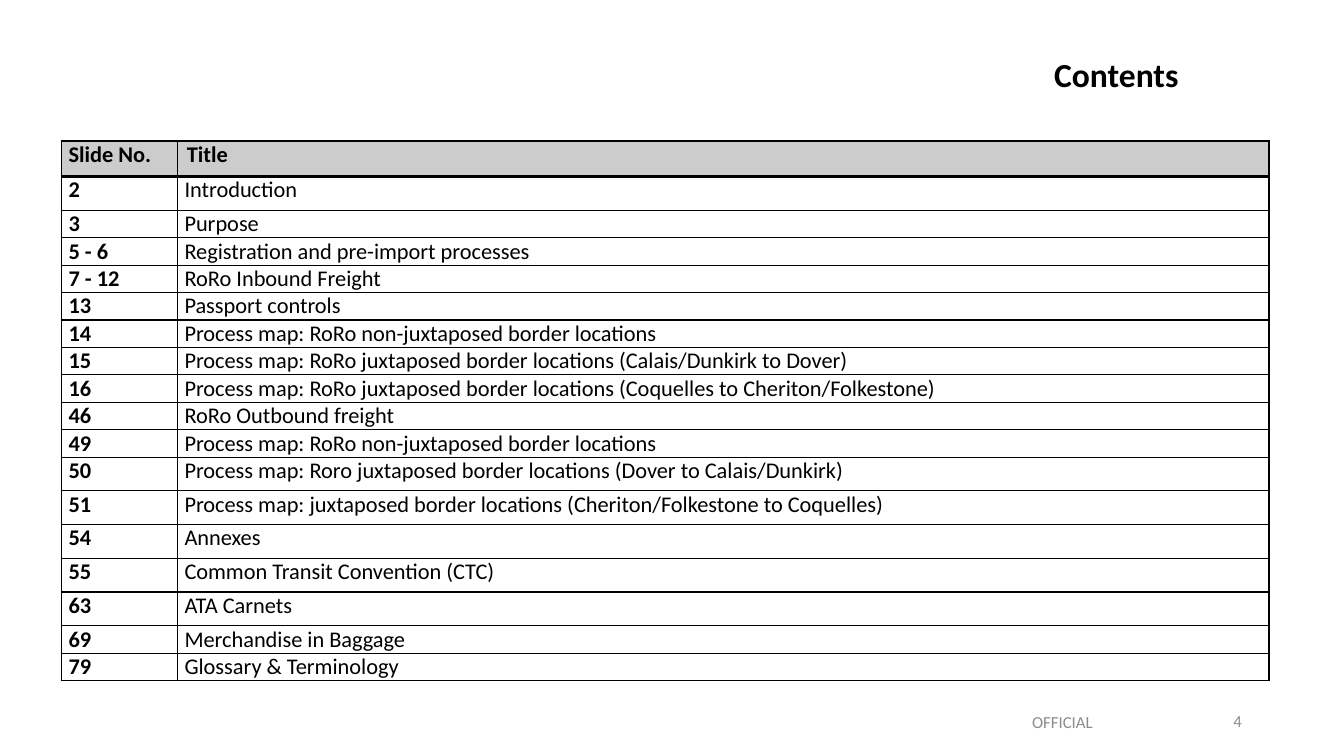
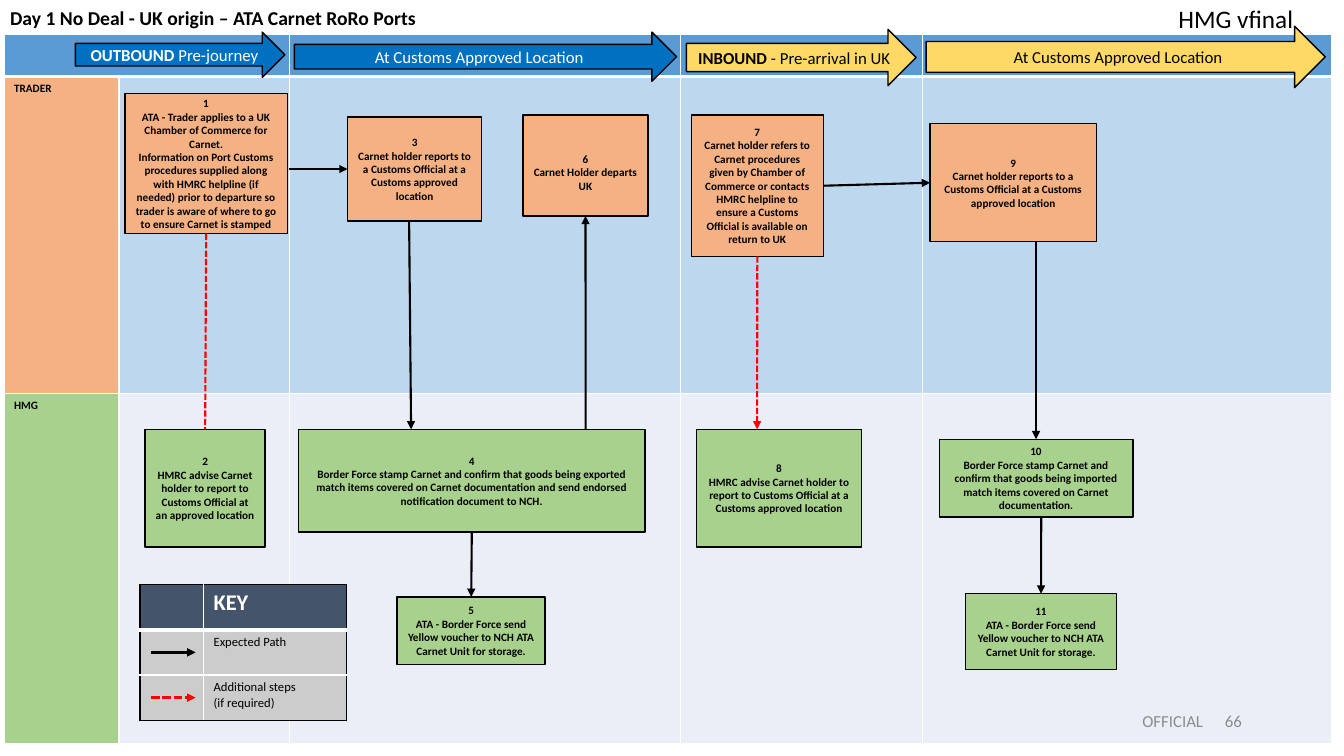
import dataclasses
import itertools
import typing

import lxml.etree
import pptx
import pptx.chart.data
import pptx.dml.color
import pptx.enum.dml
import pptx.enum.shapes
import pptx.enum.text
import pptx.oxml.ns
import pptx.util

Cm = pptx.util.Cm
Align = pptx.enum.text.PP_ALIGN
Anchor = pptx.enum.text.MSO_ANCHOR
Preset = pptx.enum.shapes.MSO_SHAPE
TOP, LEFT, BOTTOM, RIGHT = range(4)


@dataclasses.dataclass(frozen=True)
class Theme:
    """Colours, font and type sizes of the presentation."""
    font: str = "Calibri"
    black: str = "000000"
    white: str = "FFFFFF"
    footer: str = "8C8C8C"
    grey: str = "CCCCCC"
    slate: str = "44546A"
    orange: str = "F4B183"
    green: str = "A9D18E"
    band: str = "5B9BD5"
    trader_lane: str = "BDD7EE"
    hmg_lane: str = "EAEFF7"
    outbound: str = "0070C0"
    inbound: str = "FFD966"
    red: str = "FF0000"
    title_size: int = 24
    map_title_size: int = 14
    version_size: int = 18
    table_size: int = 16
    body_size: int = 12
    key_size: int = 9
    step_size: int = 8


THEME = Theme()


class Box(typing.NamedTuple):
    """A rectangle in centimetres."""
    left: float
    top: float
    width: float
    height: float

    def inner(self, left, top, width, height):
        """Return a box placed relative to this one."""
        return Box(self.left + left, self.top + top, width, height)

    def lengths(self):
        """Return the four lengths for python-pptx."""
        return [Cm(value) for value in self]


class Point(typing.NamedTuple):
    """A free connector end, relative to the map."""
    x: float
    y: float


class Site(typing.NamedTuple):
    """A connector end joined to the side of a step."""
    step: int
    side: int


CONTENTS = [
    ("Slide No.", "Title"),
    ("2", "Introduction"),
    ("3", "Purpose"),
    ("5 - 6", "Registration and pre-import processes"),
    ("7 - 12", "RoRo Inbound Freight"),
    ("13", "Passport controls"),
    ("14", "Process map: RoRo non-juxtaposed border locations"),
    ("15", "Process map: RoRo juxtaposed border locations (Calais/Dunkirk to Dover)"),
    ("16", "Process map: RoRo juxtaposed border locations (Coquelles to Cheriton/Folkestone)"),
    ("46", "RoRo Outbound freight"),
    ("49", "Process map: RoRo non-juxtaposed border locations"),
    ("50", "Process map: Roro juxtaposed border locations (Dover to Calais/Dunkirk)"),
    ("51", "Process map: juxtaposed border locations (Cheriton/Folkestone to Coquelles)"),
    ("54", "Annexes"),
    ("55", "Common Transit Convention (CTC)"),
    ("63", "ATA Carnets"),
    ("69", "Merchandise in Baggage"),
    ("79", "Glossary & Terminology"),
]
CONTENTS_HEIGHTS = [0.89, 0.85] + [0.69] * 9 + [0.85] * 5 + [0.69] * 2

PHASES = [
    ((1.8, -0.05, 5.28, 1.14), THEME.outbound, THEME.white, "OUTBOUND ", "Pre-journey"),
    ((7.32, -0.05, 9.63, 1.24), THEME.outbound, THEME.white, "", "At Customs Approved Location"),
    ((17.2, -0.12, 5.79, 1.42), THEME.inbound, THEME.black, "INBOUND ", "- Pre-arrival in UK"),
    ((23.24, -0.2, 10.06, 1.55), THEME.inbound, THEME.black, "", "At Customs Approved Location"),
]

REPORT = "Carnet holder reports to a Customs Official at a Customs approved location"
VOUCHER = "ATA - Border Force send Yellow voucher to NCH ATA Carnet Unit for storage."
STEPS = {
    1: ((3.05, 1.5, 4.09, 3.53), THEME.orange,
        "ATA - Trader applies to a UK Chamber of Commerce for Carnet.\n"
        "Information on Port Customs procedures supplied along with HMRC helpline (if needed) "
        "prior to departure so trader is aware of where to go to ensure Carnet is stamped"),
    2: ((3.56, 9.96, 3.02, 2.97), THEME.green,
        "HMRC advise Carnet holder to report to Customs Official at an approved location"),
    3: ((8.66, 2.09, 3.38, 2.62), THEME.orange, REPORT),
    4: ((7.42, 9.96, 8.74, 2.59), THEME.green,
        "Border Force stamp Carnet and confirm that goods being exported match items covered on "
        "Carnet documentation and send endorsed notification document to NCH."),
    5: ((9.91, 14.18, 3.73, 1.7), THEME.green, VOUCHER),
    6: ((13.08, 2.04, 3.15, 2.54), THEME.orange, "Carnet Holder departs UK"),
    7: ((17.32, 2.04, 3.33, 3.56), THEME.orange,
        "Carnet holder refers to Carnet procedures given by Chamber of Commerce or contacts "
        "HMRC helpline to ensure a Customs Official is available on return to UK"),
    8: ((17.45, 9.96, 4.17, 2.97), THEME.green,
        "HMRC advise Carnet holder to report to Customs Official at a Customs approved location"),
    9: ((23.34, 2.26, 4.19, 2.97), THEME.orange, REPORT),
    10: ((23.57, 10.21, 4.88, 1.96), THEME.green,
         "Border Force stamp Carnet and confirm that goods being imported match items covered on "
         "Carnet documentation."),
    11: ((24.23, 14.1, 3.81, 1.91), THEME.green, VOUCHER),
}
EXPECTED_ROUTES = [
    (Point(7.19, 3.4), Site(3, LEFT)),
    (Point(10.21, 4.71), Point(10.26, 9.96)),
    (Site(4, BOTTOM), Site(5, TOP)),
    (Point(14.66, 9.96), Site(6, BOTTOM)),
    (Site(7, RIGHT), Site(9, LEFT)),
    (Point(26.01, 5.23), Site(10, TOP)),
    (Point(26.14, 12.17), Site(11, TOP)),
]


def rgb(value):
    """Return a colour object for a hex string."""
    return pptx.dml.color.RGBColor.from_string(value)


def format_text(text_frame, size, colour=THEME.black, bold=False, align=Align.LEFT):
    """Format every paragraph and run of a text frame."""
    for paragraph in text_frame.paragraphs:
        paragraph.alignment = align
        for run in paragraph.runs:
            run.font.name = THEME.font
            run.font.size = pptx.util.Pt(size)
            run.font.bold = bold
            run.font.color.rgb = rgb(colour)


def add_title(slide, box, text, size):
    """Place and format the title placeholder."""
    title = slide.shapes.title
    title.left, title.top, title.width, title.height = box.lengths()
    frame = title.text_frame
    frame.text = text
    frame.word_wrap = True
    frame.auto_size = pptx.enum.text.MSO_AUTO_SIZE.NONE
    frame.vertical_anchor = Anchor.MIDDLE
    frame.paragraphs[0].line_spacing = 0.9
    format_text(frame, size, bold=True)


def add_label(slide, box, text, size, colour, align, anchor=Anchor.MIDDLE):
    """Add a plain text box."""
    frame = slide.shapes.add_textbox(*box.lengths()).text_frame
    frame.text = text
    frame.word_wrap = True
    frame.vertical_anchor = anchor
    format_text(frame, size, colour, align=align)


def add_footer(slide, number, marking_box, marking_align):
    """Add the security marking and the slide number."""
    for box, text, align in ((Box(23.93, 17.65, 7.62, 1.02), number, Align.RIGHT),
                             (marking_box, "OFFICIAL", marking_align)):
        add_label(slide, box, text, THEME.body_size, THEME.footer, align)


def add_grid(slide, box, widths, heights):
    """Add a table without banding and with given column and row sizes."""
    table = slide.shapes.add_table(len(heights), len(widths), *box.lengths()).table
    table.first_row = table.horz_banding = False
    for column, width in zip(table.columns, widths):
        column.width = Cm(width)
    for row, height in zip(table.rows, heights):
        row.height = Cm(height)
    return table


def fill_cell(cell, fill, borders):
    """Set the fill and the left, right, top and bottom borders of a cell."""
    if fill:
        cell.fill.solid()
        cell.fill.fore_color.rgb = rgb(fill)
    else:
        cell.fill.background()
    properties = cell._tc.get_or_add_tcPr()
    qn = pptx.oxml.ns.qn
    for position, (side, (colour, width)) in enumerate(zip("LRTB", borders)):
        line = lxml.etree.Element(qn(f"a:ln{side}"), w=str(int(pptx.util.Pt(width))))
        solid = lxml.etree.SubElement(line, qn("a:solidFill"))
        lxml.etree.SubElement(solid, qn("a:srgbClr"), val=colour)
        properties.insert(position, line)


def add_block(slide, preset, box, fill):
    """Add an outlined shape with centred text."""
    shape = slide.shapes.add_shape(preset, *box.lengths())
    shape.shadow.inherit = False
    shape.fill.solid()
    shape.fill.fore_color.rgb = rgb(fill)
    shape.line.color.rgb = rgb(THEME.black)
    shape.line.width = pptx.util.Pt(1)
    shape.text_frame.word_wrap = True
    shape.text_frame.vertical_anchor = Anchor.MIDDLE
    return shape


def add_path(slide, box, start, end, steps=None, extra=False, width=1.5, head=True):
    """Draw an expected or additional path between points or step sides."""
    corners = [box.inner(*place, 0, 0).lengths()[:2] if isinstance(place, Point) else (0, 0)
               for place in (start, end)]
    connector = slide.shapes.add_connector(
        pptx.enum.shapes.MSO_CONNECTOR.STRAIGHT, *itertools.chain(*corners))
    for place, join in ((start, connector.begin_connect), (end, connector.end_connect)):
        if isinstance(place, Site):
            join(steps[place.step], place.side)
    connector.line.color.rgb = rgb(THEME.red if extra else THEME.black)
    connector.line.width = pptx.util.Pt(width)
    if extra:
        connector.line.dash_style = pptx.enum.dml.MSO_LINE.SQUARE_DOT
    qn = pptx.oxml.ns.qn
    if head:
        lxml.etree.SubElement(connector.line._get_or_add_ln(), qn("a:tailEnd"), type="triangle")
    lxml.etree.SubElement(connector._element.spPr, qn("a:effectLst"))


def add_contents_table(slide, box):
    """Add the list of slides."""
    table = add_grid(slide, box, (2.92, box.width - 2.92), CONTENTS_HEIGHTS)
    for row, column in itertools.product(range(len(CONTENTS)), range(2)):
        cell = table.cell(row, column)
        header = row == 0
        cell.text_frame.text = CONTENTS[row][column]
        cell.margin_left = Cm(0.24 if header and column else 0.18)
        cell.margin_right = Cm(0.18)
        cell.margin_top = cell.margin_bottom = 0
        format_text(cell.text_frame, THEME.table_size, bold=header or column == 0)
        widths = (1 if column else 1.5, 1, {0: 1.5, 1: 2.25}.get(row, 1), 2.25 if header else 1)
        fill_cell(cell, THEME.grey if header else None, [(THEME.black, width) for width in widths])


def add_lanes(slide, box):
    """Add the swimlane table behind the process."""
    table = add_grid(slide, box, (2.9, 4.29, 9.86, 6.1, 10.31), (1.07, 7.98, 8.84))
    lanes = (("", THEME.band, THEME.band), ("TRADER", THEME.orange, THEME.trader_lane),
             ("HMG", THEME.green, THEME.hmg_lane))
    for row, (name, name_fill, lane_fill) in enumerate(lanes):
        widths = (1, 1, 3 if row == 1 else 1, 1 if row else 3)
        for column in range(5):
            fill_cell(table.cell(row, column), lane_fill if column else name_fill,
                      [(THEME.white, width) for width in widths])
        if name:
            frame = table.cell(row, 0).text_frame
            frame.text = name
            format_text(frame, THEME.step_size, bold=True)
    table.cell(0, 0).merge(table.cell(0, 1))


def add_phases(slide, box):
    """Add the block arrows that head the columns."""
    for place, fill, colour, lead, rest in PHASES:
        frame = add_block(slide, Preset.RIGHT_ARROW, box.inner(*place), fill).text_frame
        paragraph = frame.paragraphs[0]
        paragraph.text = lead
        paragraph.add_run().text = rest
        format_text(frame, THEME.body_size, colour, align=Align.CENTER)
        if lead:
            paragraph.runs[0].font.bold = True


def add_steps(slide, box):
    """Add the numbered steps and the paths between them."""
    steps = {}
    for number, (place, fill, text) in STEPS.items():
        steps[number] = add_block(slide, Preset.RECTANGLE, box.inner(*place), fill)
        frame = steps[number].text_frame
        frame.text = f"{number}\n{text}"
        format_text(frame, THEME.step_size, bold=True, align=Align.CENTER)
    steps[6].text_frame.margin_top = Cm(0.48)
    for start, end in EXPECTED_ROUTES:
        add_path(slide, box, start, end, steps)
    add_path(slide, box, Site(1, BOTTOM), Site(2, TOP), steps, extra=True, head=False)
    add_path(slide, box, Site(7, BOTTOM), Point(18.98, 9.96), steps, extra=True)


def add_key(slide, box):
    """Add the key to the two kinds of path."""
    row_height = box.height / 3
    table = add_grid(slide, box, (1.6, box.width - 1.6), [row_height] * 3)
    inside, outside, rule = (THEME.white, 1), (THEME.black, 1), (THEME.white, 3)
    for row, text in enumerate(("KEY", "Expected Path", "Additional steps\n(if required)")):
        top, bottom = ((outside, rule), (rule, inside), (inside, outside))[row]
        fill = THEME.grey if row else THEME.slate
        fill_cell(table.cell(row, 0), fill, (outside, inside, top, bottom))
        fill_cell(table.cell(row, 1), fill, (inside, outside, top, bottom))
        frame = table.cell(row, 1).text_frame
        frame.text = text
        if row:
            format_text(frame, THEME.key_size)
            middle = row_height * (row + 0.5)
            add_path(slide, box, Point(0.28, middle), Point(1.4, middle), extra=row == 2, width=2)
        else:
            format_text(frame, THEME.table_size, THEME.white, bold=True)


def build_contents(slide):
    """Build the contents slide."""
    add_contents_table(slide, Box(1.55, 3.56, 30.43, sum(CONTENTS_HEIGHTS)))
    add_title(slide, Box(26.31, 1.04, 3.99, 1.78), "Contents", THEME.title_size)
    add_footer(slide, "4", Box(21.06, 17.68, 11.43, 1.02), Align.CENTER)


def build_process_map(slide):
    """Build the process map slide."""
    box = Box(0.1, 0.86, 33.46, 17.89)
    add_lanes(slide, box)
    add_title(slide, Box(0, -0.05, 16.69, 1.09),
              "Day 1 No Deal - UK origin – ATA Carnet RoRo Ports", THEME.map_title_size)
    add_label(slide, Box(28.73, -0.03, 4.11, 1.02), "HMG vfinal", THEME.version_size,
              THEME.black, Align.RIGHT, Anchor.TOP)
    add_phases(slide, box)
    add_steps(slide, box)
    add_key(slide, box.inner(3.43, 13.87, 5.21, 3.42))
    add_footer(slide, "66", Box(19.14, 17.65, 11.43, 1.02), Align.RIGHT)


def main():
    """Build and save the presentation."""
    presentation = pptx.Presentation()
    presentation.slide_width, presentation.slide_height = Cm(33.87), Cm(19.05)
    for build in (build_contents, build_process_map):
        build(presentation.slides.add_slide(presentation.slide_layouts[5]))
    presentation.save("out.pptx")


if __name__ == "__main__":
    main()
